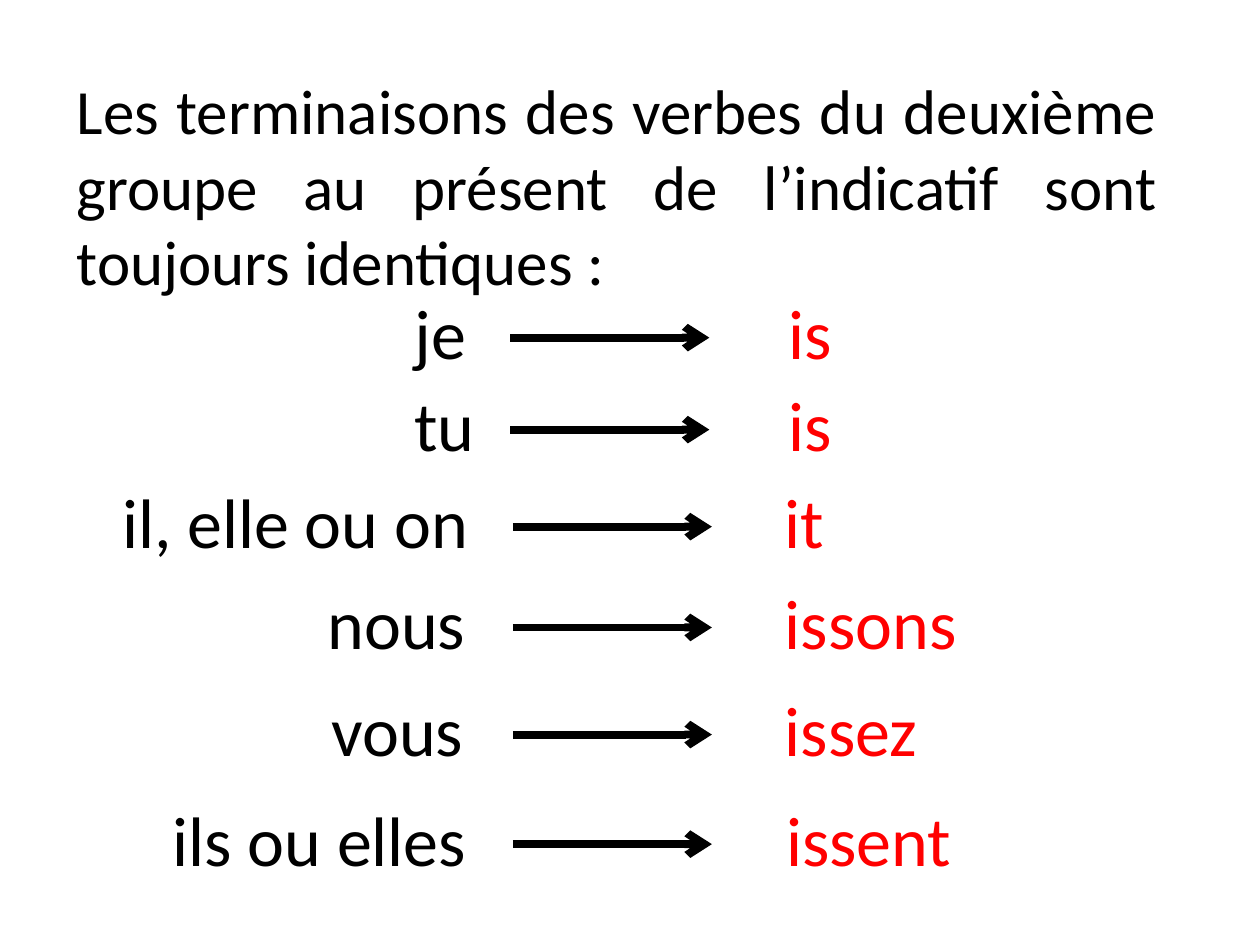
from dataclasses import dataclass

from lxml.etree import SubElement
from pptx import Presentation
from pptx.dml.color import RGBColor
from pptx.enum.shapes import MSO_CONNECTOR
from pptx.enum.text import MSO_AUTO_SIZE, PP_ALIGN
from pptx.oxml.ns import qn
from pptx.slide import Slide
from pptx.util import Inches, Pt

BLACK = RGBColor(0x00, 0x00, 0x00)
RED = RGBColor(0xFF, 0x00, 0x00)
FONT = "Calibri"

PAGE_WIDTH, PAGE_HEIGHT = 10, 7.5
ROW_WIDTH, ROW_HEIGHT = 0.764 * PAGE_WIDTH, 0.77
ARROW_LENGTH, ARROW_DROP = 1.58, 0.43

INTRO = ("Les terminaisons des verbes du deuxième groupe au présent "
         "de l’indicatif sont toujours identiques :")


@dataclass(frozen=True)
class Conjugation:
    """One row: its wording, then the places of its parts in inches."""
    pronoun: str
    ending: str
    top: float
    left: float
    pronoun_x: float
    arrow_x: float
    ending_x: float


ROWS = (
    Conjugation("je", "is", 2.25, 1.14, 3.29, 4.05, 6.26),
    Conjugation("tu", "is", 2.98, 1.14, 3.29, 4.05, 6.26),
    Conjugation("il, elle ou on", "it", 3.75, 0.91, 0.97, 4.07, 6.23),
    Conjugation("nous", "issons", 4.55, 0.91, 2.6, 4.07, 6.23),
    Conjugation("vous", "issez", 5.4, 0.91, 2.63, 4.07, 6.23),
    Conjugation("ils ou elles", "issent", 6.27, 1.3, 1.37, 4.07, 6.24),
)


def style_run(span, size: float, color: RGBColor) -> None:
    span.font.name = FONT
    span.font.size = Pt(size)
    span.font.color.rgb = color


def add_intro(page: Slide) -> None:
    box = page.shapes.add_textbox(Inches(0.51), Inches(0.52), Inches(8.77), Inches(1.73))
    box.text_frame.word_wrap = True
    box.text_frame.text = INTRO
    para = box.text_frame.paragraphs[0]
    para.alignment = PP_ALIGN.JUSTIFY
    style_run(para.runs[0], 36, BLACK)


def add_tab_stop(para, position: float) -> None:
    stops = SubElement(para._p.get_or_add_pPr(), qn("a:tabLst"))
    SubElement(stops, qn("a:tab"), pos=str(Inches(position)), algn="l")


def add_arrow(shapes, x: float, y: float) -> None:
    arrow = shapes.add_connector(MSO_CONNECTOR.STRAIGHT, Inches(x), Inches(y),
                                 Inches(x + ARROW_LENGTH), Inches(y))
    arrow.line.color.rgb = BLACK
    arrow.line.width = Pt(4.5)
    SubElement(arrow.line._get_or_add_ln(), qn("a:tailEnd"), type="arrow")
    SubElement(arrow._element.spPr, qn("a:effectLst"))


def add_row(page: Slide, row: Conjugation) -> None:
    group = page.shapes.add_group_shape()
    box = group.shapes.add_textbox(Inches(row.left), Inches(row.top),
                                   Inches(ROW_WIDTH), Inches(ROW_HEIGHT))
    frame = box.text_frame
    frame.word_wrap = True
    frame.auto_size = MSO_AUTO_SIZE.SHAPE_TO_FIT_TEXT
    # The inset places the pronoun and the tab stop places the ending
    frame.margin_left = Inches(row.pronoun_x - row.left)
    para = frame.paragraphs[0]
    add_tab_stop(para, row.ending_x - row.pronoun_x)
    for words, color in ((row.pronoun + "\t", BLACK), (row.ending, RED)):
        span = para.add_run()
        span.text = words
        style_run(span, 40, color)
    add_arrow(group.shapes, row.arrow_x, row.top + ARROW_DROP)


def main() -> None:
    deck = Presentation()
    deck.slide_width, deck.slide_height = Inches(PAGE_WIDTH), Inches(PAGE_HEIGHT)
    page = deck.slides.add_slide(deck.slide_layouts[6])
    # Rule at the top, then one row per person
    add_intro(page)
    for row in ROWS:
        add_row(page, row)
    deck.save("out.pptx")


if __name__ == "__main__":
    main()
